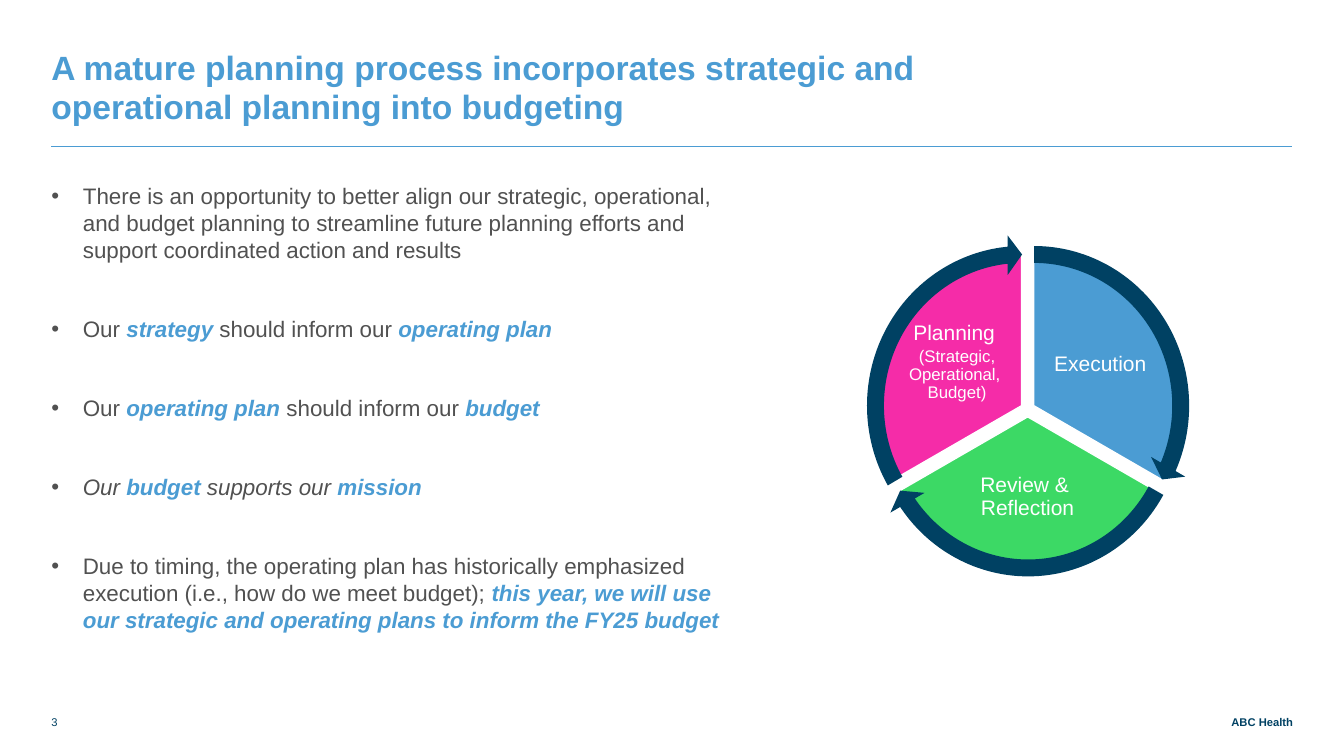
"""Build the slide on linking strategic and operational planning to budgeting."""
from dataclasses import dataclass
from typing import Any

from lxml import etree
from pptx import Presentation
from pptx.dml.color import RGBColor
from pptx.enum.shapes import MSO_CONNECTOR, MSO_SHAPE
from pptx.enum.text import MSO_ANCHOR, MSO_AUTO_SIZE, PP_ALIGN
from pptx.oxml.ns import qn
from pptx.util import Pt

PIE, CIRCULAR_ARROW = MSO_SHAPE.PIE, MSO_SHAPE.CIRCULAR_ARROW
STRAIGHT = MSO_CONNECTOR.STRAIGHT
TOP, BOTTOM = MSO_ANCHOR.TOP, MSO_ANCHOR.BOTTOM
LEFT, CENTER, RIGHT = PP_ALIGN.LEFT, PP_ALIGN.CENTER, PP_ALIGN.RIGHT
NO_FIT = MSO_AUTO_SIZE.NONE

BLUE = RGBColor(0x4B, 0x9C, 0xD3)
NAVY = RGBColor(0x00, 0x41, 0x63)
GREY = RGBColor(0x51, 0x51, 0x51)
GREEN = RGBColor(0x3C, 0xD9, 0x65)
PINK = RGBColor(0xF5, 0x2C, 0xA8)
WHITE = RGBColor(0xFF, 0xFF, 0xFF)

PLAIN = {"color": GREY, "bold": False, "italic": False}
ITALIC = {"color": GREY, "bold": False, "italic": True}
STRONG = {"color": BLUE, "bold": True, "italic": True}

Box = tuple[float, float, float, float]


@dataclass
class Sector:
    left: float
    top: float
    start: float
    color: RGBColor
    arrow: tuple[float, float]


@dataclass
class Label:
    box: Box
    lines: list[tuple[str, float]]
    color: RGBColor = WHITE
    bold: bool = False
    align: PP_ALIGN = CENTER
    anchor: MSO_ANCHOR = TOP
    insets: Box = (7.2, 3.6, 7.2, 3.6)
    wrap: bool = True
    spacing: float = 0.9
    gap: float = 0


TITLE = "A mature planning process incorporates strategic and operational planning into budgeting"
BULLETS = [
    [("There is an opportunity to better align our strategic, operational, and budget planning "
      "to streamline future planning efforts and support coordinated action and results", PLAIN)],
    [("Our ", PLAIN), ("strategy", STRONG), (" should inform our ", PLAIN),
     ("operating plan", STRONG)],
    [("Our ", PLAIN), ("operating plan ", STRONG), ("should inform our ", PLAIN),
     ("budget", STRONG)],
    [("Our ", ITALIC), ("budget", STRONG), (" supports our ", ITALIC), ("mission", STRONG)],
    [("Due to timing, the operating plan has historically emphasized execution "
      "(i.e., how do we meet budget); ", PLAIN),
     ("this year, we will use our strategic and operating plans to inform the FY25 budget",
      STRONG)],
]
SECTORS = [
    Sector(632.9, 181.4, 270, BLUE, (14.72, 161.99)),
    Sector(628.6, 189.4, 30, GREEN, (86.72, 18.01)),
    Sector(624.3, 181.4, 150, PINK, (158.73, 89.56)),
]
NO_INSETS = (0, 0, 0, 0)
LABELS = [
    Label((615.6, 226.8, 136.1, 64.8),
          [("Planning ", 15), ("(Strategic, Operational, ", 12), ("Budget)", 12)], gap=2),
    Label((745.9, 247, 81.4, 25.2), [("Execution", 15)], align=LEFT, wrap=False, spacing=1),
    Label((692.6, 335.5, 82.8, 40.3), [("Review & ", 15), ("Reflection", 15)], wrap=False),
    Label((36.7, 504, 33.1, 16.6), [("3", 8)], NAVY, False, LEFT, BOTTOM, NO_INSETS, spacing=1),
    Label((805.7, 504, 118.1, 16.6), [("ABC Health", 8)], NAVY, True, RIGHT, BOTTOM,
          NO_INSETS, spacing=1),
]


def apply(target: Any, values: dict[str, Any]) -> None:
    for name, value in values.items():
        setattr(target, name, value)


def place(sp: Any, box: Box) -> None:
    apply(sp, dict(zip(("left", "top", "width", "height"), map(Pt, box))))


def set_frame(tf: Any, insets: Box, anchor: MSO_ANCHOR, wrap: bool = True) -> None:
    names = ("margin_left", "margin_top", "margin_right", "margin_bottom")
    apply(tf, dict(zip(names, map(Pt, insets))))
    apply(tf, {"vertical_anchor": anchor, "word_wrap": wrap, "auto_size": NO_FIT})


def add_run(p: Any, text: str, size: float, color: RGBColor, bold: bool,
            italic: bool = False) -> None:
    r = p.add_run()
    r.text = text
    apply(r.font, {"name": "Arial", "size": Pt(size), "bold": bold, "italic": italic})
    r.font.color.rgb = color


def add_title(s: Any) -> None:
    sp = s.shapes.title
    place(sp, (36.7, 27.4, 886.3, 56.9))
    set_frame(sp.text_frame, (0, 68.4, 152.6, 0), BOTTOM)
    p = sp.text_frame.paragraphs[0]
    apply(p, {"alignment": LEFT, "line_spacing": Pt(28)})
    add_run(p, TITLE, 24, BLUE, True)


def add_bullets(s: Any) -> None:
    sp = s.placeholders[1]
    place(sp, (36.7, 124.6, 503.3, 367.9))
    tf = sp.text_frame
    set_frame(tf, (0, 5.8, 21.6, 0), TOP)
    for i, runs in enumerate(BULLETS):
        p = tf.add_paragraph() if i else tf.paragraphs[0]
        pPr = p._p.get_or_add_pPr()
        pPr.set("marL", str(Pt(22.5)))
        pPr.set("indent", str(-Pt(22.5)))
        etree.SubElement(pPr, qn("a:buChar")).set("char", "•")
        apply(p, {"space_before": Pt(0), "space_after": Pt(37.2), "line_spacing": Pt(19.2)})
        for text, style in runs:
            add_run(p, text, 16, **style)


def add_rule(s: Any) -> None:
    line = s.shapes.add_connector(STRAIGHT, Pt(36.7), Pt(104.6), Pt(923), Pt(104.6))
    line.line.color.rgb = BLUE
    line.line.width = Pt(0.5)
    etree.SubElement(line._element.spPr, qn("a:effectLst"))


def add_preset(s: Any, kind: MSO_SHAPE, box: Box, color: RGBColor,
               adjustments: tuple[float, ...]) -> Any:
    sp = s.shapes.add_shape(kind, *map(Pt, box))
    sp.shadow.inherit = False
    sp.fill.solid()
    sp.fill.fore_color.rgb = color
    sp.line.fill.background()
    for i, value in enumerate(adjustments):
        sp.adjustments[i] = value
    return sp


def add_wheel(s: Any) -> None:
    for sector in SECTORS:
        end = (sector.start + 120) % 360
        sp = add_preset(s, PIE, (sector.left, sector.top, 211, 216.7), sector.color,
                        (sector.start * 0.6, end * 0.6))
        sp.line.color.rgb = WHITE
        sp.line.width = Pt(1)
    for sector in SECTORS:
        add_preset(s, CIRCULAR_ARROW, (sector.left - 13, sector.top - 13.7, 237.6, 244.1),
                   NAVY, (0.05085, 3.275, *sector.arrow, 0.0593))


def add_label(s: Any, label: Label) -> None:
    tf = s.shapes.add_textbox(*map(Pt, label.box)).text_frame
    set_frame(tf, label.insets, label.anchor, label.wrap)
    for i, (text, size) in enumerate(label.lines):
        p = tf.add_paragraph() if i else tf.paragraphs[0]
        apply(p, {"alignment": label.align, "line_spacing": label.spacing})
        if i == 1:
            p.space_before = Pt(label.gap)
        add_run(p, text, size, label.color, label.bold)


def main() -> None:
    prs = Presentation()
    apply(prs, {"slide_width": Pt(960), "slide_height": Pt(540)})
    s = prs.slides.add_slide(prs.slide_layouts[1])
    add_rule(s)
    add_title(s)
    add_bullets(s)
    add_wheel(s)
    for label in LABELS:
        add_label(s, label)
    prs.save("out.pptx")


if __name__ == "__main__":
    main()
